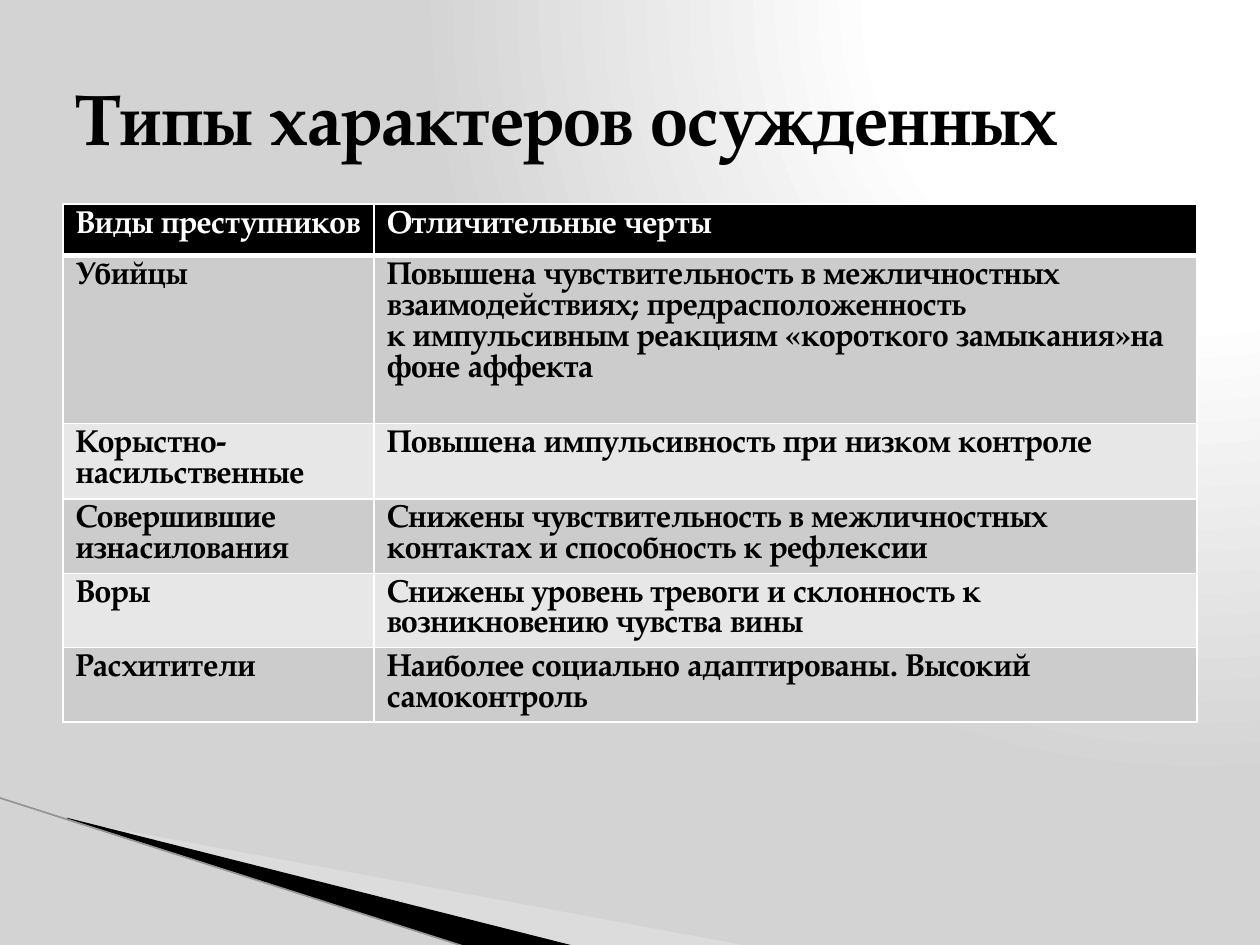
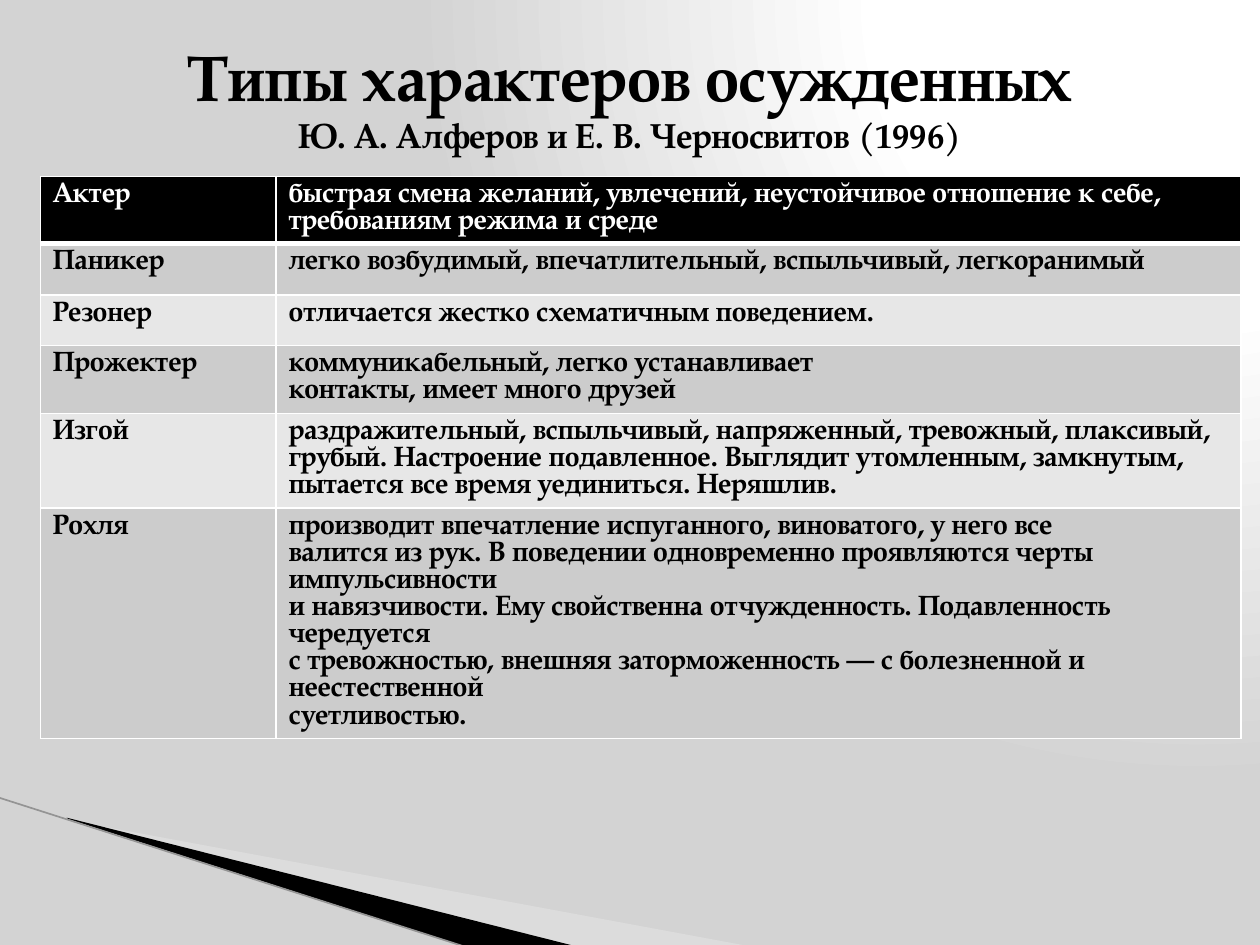
from lxml import etree
from pptx import Presentation
from pptx.dml.color import RGBColor
from pptx.enum.shapes import MSO_CONNECTOR
from pptx.enum.text import MSO_ANCHOR, PP_ALIGN
from pptx.oxml import parse_xml
from pptx.oxml.ns import nsdecls, qn
from pptx.util import Inches, Pt

STRAIGHT = MSO_CONNECTOR.STRAIGHT
TOP, MIDDLE = MSO_ANCHOR.TOP, MSO_ANCHOR.MIDDLE
LEFT, CENTER = PP_ALIGN.LEFT, PP_ALIGN.CENTER

FONT = "TeX Gyre Pagella"
COLORS = {
    "text": "000000",
    "header": "000000",
    "header_text": "FFFFFF",
    "odd_row": "CCCCCC",
    "even_row": "E7E7E7",
    "border": "FFFFFF",
    "glow": "FFFFFF",
    "backdrop": "D3D3D3",
    "pale_wedge": "EAEAEA",
    "dark_wedge": "000000",
    "edge": "949494",
}
BACKDROP_XML = f"""
<a:gradFill {nsdecls("a")} rotWithShape="1">
  <a:gsLst>
    <a:gs pos="0"><a:srgbClr val="{COLORS["glow"]}"/></a:gs>
    <a:gs pos="40000"><a:srgbClr val="{COLORS["glow"]}"/></a:gs>
    <a:gs pos="100000"><a:srgbClr val="{COLORS["backdrop"]}"/></a:gs>
  </a:gsLst>
  <a:path path="circle"><a:fillToRect l="95000" t="-106000" r="5000" b="206000"/></a:path>
</a:gradFill>"""

# Corner wedges: colour, opacity in percent, frame and outline points in inches
WEDGES = [
    ("pale_wedge", 40, (0.78, 5.47, 4.16, 1.58),
     [(0.55, 6.51), (5.95, 7.51), (4.56, 7.51), (0.55, 6.5)]),
    ("dark_wedge", 100, (-0.06, 6.33, 4.16, 0.92),
     [(0.53, 6.49), (4.57, 7.51), (3.72, 7.52), (0.54, 6.5)]),
]

SLIDES = [
    {
        "title": "Типы характеров осужденных",
        "title_sizes": [41],
        "title_top": 0.3,
        "align": LEFT,
        "anchor": MIDDLE,
        "table_at": (0.5, 1.62),
        "columns": [2.47, 6.53],
        "row_heights": [0.41, 1.33, 0.6, 0.59, 0.59, 0.59],
        "size": 18,
        "line_height": 17.6,
        "rows": [
            ("Виды преступников", "Отличительные черты"),
            ("Убийцы",
             "Повышена чувствительность в межличностных взаимодействиях; предрасположенность\n"
             "к импульсивным реакциям «короткого замыкания»на фоне аффекта"),
            ("Корыстно-насильственные", "Повышена импульсивность при низком контроле"),
            ("Совершившие\nизнасилования",
             "Снижены чувствительность в межличностных контактах и способность к рефлексии"),
            ("Воры", "Снижены уровень тревоги и склонность к возникновению чувства вины"),
            ("Расхитители", "Наиболее социально адаптированы. Высокий самоконтроль"),
        ],
    },
    {
        "title": "Типы характеров осужденных\vЮ. А. Алферов и Е. В. Черносвитов (1996)",
        "title_sizes": [36.9, 19.8],
        "title_top": 0.29,
        "align": CENTER,
        "anchor": TOP,
        "table_at": (0.32, 1.4),
        "columns": [1.87, 7.66],
        "row_heights": [0.53, 0.41, 0.4, 0.54, 0.75, 1.83],
        "size": 16,
        "line_height": 15.5,
        "rows": [
            ("Актер",
             "быстрая смена желаний, увлечений, неустойчивое отношение к себе, "
             "требованиям режима и среде"),
            ("Паникер", "легко возбудимый, впечатлительный, вспыльчивый, легкоранимый"),
            ("Резонер", "отличается жестко схематичным поведением."),
            ("Прожектер",
             "коммуникабельный, легко устанавливает\nконтакты, имеет много друзей"),
            ("Изгой",
             "раздражительный, вспыльчивый, напряженный, тревожный, плаксивый, грубый. "
             "Настроение подавленное. Выглядит утомленным, замкнутым,\n"
             "пытается все время уединиться. Неряшлив."),
            ("Рохля",
             "производит впечатление испуганного, виноватого, у него все\n"
             "валится из рук. В поведении одновременно проявляются черты импульсивности\n"
             "и навязчивости. Ему свойственна отчужденность. Подавленность чередуется\n"
             "с тревожностью, внешняя заторможенность — с болезненной и неестественной\n"
             "суетливостью."),
        ],
    },
]


def format_run(run, size, color):
    run.font.name = FONT
    run.font.size = Pt(size)
    run.font.bold = True
    run.font.color.rgb = RGBColor.from_string(COLORS[color])


def set_borders(cell, bottom_width):
    """Draw one-point borders, with the bottom one of the given width in points."""
    properties = cell._tc.get_or_add_tcPr()
    sides = [("lnL", 1), ("lnR", 1), ("lnT", 1), ("lnB", bottom_width)]
    for index, (side, width) in enumerate(sides):
        properties.insert(index, parse_xml(
            f'<a:{side} {nsdecls("a")} w="{Pt(width)}"><a:solidFill>'
            f'<a:srgbClr val="{COLORS["border"]}"/></a:solidFill></a:{side}>'))


presentation = Presentation()
presentation.slide_width = Inches(10)
presentation.slide_height = Inches(7.5)
blank_layout = presentation.slide_layouts[6]

for content in SLIDES:
    slide = presentation.slides.add_slide(blank_layout)

    # Background
    slide.background.fill.gradient()
    gradient = slide.element.find(".//" + qn("a:gradFill"))
    gradient.getparent().replace(gradient, parse_xml(BACKDROP_XML))

    # Corner wedges and edge line
    for color, opacity, wedge_frame, points in WEDGES:
        corners = [(Inches(x), Inches(y)) for x, y in points]
        builder = slide.shapes.build_freeform(*corners[0], scale=1.0)
        builder.add_line_segments(corners[1:], close=True)
        wedge = builder.convert_to_shape()
        wedge.shadow.inherit = False
        wedge.line.fill.background()
        wedge.fill.solid()
        wedge.fill.fore_color.rgb = RGBColor.from_string(COLORS[color])
        if opacity < 100:
            wedge_color = wedge._element.spPr.find(".//" + qn("a:srgbClr"))
            etree.SubElement(wedge_color, qn("a:alpha")).set("val", str(opacity * 1000))

        # The outline reaches outside its frame, so its points are set against the frame
        left, top, width, height = map(Inches, wedge_frame)
        wedge.left, wedge.top, wedge.width, wedge.height = left, top, width, height
        outline = wedge._element.spPr.find(".//" + qn("a:path"))
        outline.set("w", str(width))
        outline.set("h", str(height))
        for point, (x, y) in zip(outline.iter(qn("a:pt")), corners):
            point.set("x", str(x - left))
            point.set("y", str(y - top))

    edge = slide.shapes.add_connector(
        STRAIGHT, Inches(-0.01), Inches(6.33), Inches(3.71), Inches(7.52))
    edge.line.color.rgb = RGBColor.from_string(COLORS["edge"])
    edge.line.width = Pt(0.95)
    etree.SubElement(edge._element.spPr, qn("a:effectLst"))

    # Title
    title = slide.shapes.add_textbox(
        Inches(0.5), Inches(content["title_top"]), Inches(9), Inches(1.25))
    frame = title.text_frame
    frame.word_wrap = True
    frame.margin_top = frame.margin_bottom = 0
    frame.vertical_anchor = content["anchor"]
    frame.text = content["title"]
    paragraph = frame.paragraphs[0]
    paragraph.alignment = content["align"]
    for run, size in zip(paragraph.runs, content["title_sizes"]):
        format_run(run, size, "text")

    # Table
    left, top = content["table_at"]
    rows, columns, heights = content["rows"], content["columns"], content["row_heights"]
    table = slide.shapes.add_table(
        len(rows), len(columns), Inches(left), Inches(top),
        Inches(sum(columns)), Inches(sum(heights))).table
    for column, width in zip(table.columns, columns):
        column.width = Inches(width)
    for row_index, (row, height, texts) in enumerate(zip(table.rows, heights, rows)):
        row.height = Inches(height)
        is_header = row_index == 0
        row_color = "header" if is_header else "odd_row" if row_index % 2 else "even_row"
        for cell, text in zip(row.cells, texts):
            cell.fill.solid()
            cell.fill.fore_color.rgb = RGBColor.from_string(COLORS[row_color])
            set_borders(cell, 3 if is_header else 1)
            cell.text_frame.text = text
            for paragraph in cell.text_frame.paragraphs:
                paragraph.line_spacing = Pt(content["line_height"])
                for run in paragraph.runs:
                    format_run(run, content["size"], "header_text" if is_header else "text")

presentation.save("out.pptx")
